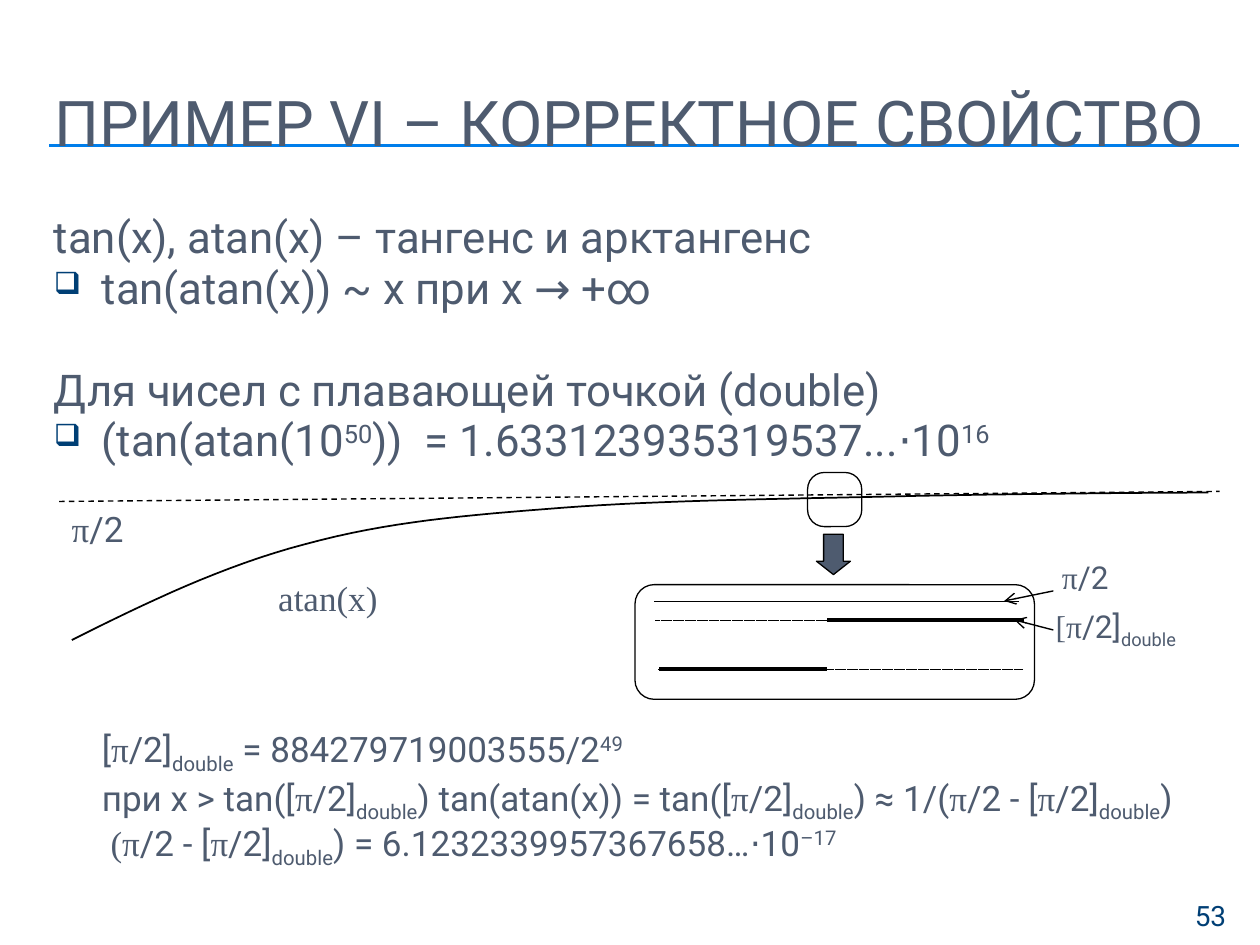
from lxml import etree
from pptx import Presentation
from pptx.dml.color import RGBColor
from pptx.enum.dml import MSO_LINE
from pptx.enum.shapes import MSO_CONNECTOR, MSO_SHAPE
from pptx.enum.text import MSO_ANCHOR, PP_ALIGN
from pptx.oxml.ns import qn
from pptx.util import Inches, Pt

SLATE = RGBColor(0x4E, 0x5B, 0x6F)
NAVY = RGBColor(0x00, 0x3F, 0x75)
BLUE = RGBColor(0x00, 0x7E, 0xEB)
BLACK = RGBColor(0, 0, 0)
WHITE = RGBColor(255, 255, 255)
SANS, SERIF = "Roboto", "Times New Roman"
DASH, DOTS, LONG = MSO_LINE.DASH, MSO_LINE.SQUARE_DOT, MSO_LINE.LONG_DASH
STRAIGHT = MSO_CONNECTOR.STRAIGHT
ROUND, DOWN = MSO_SHAPE.ROUNDED_RECTANGLE, MSO_SHAPE.DOWN_ARROW
LEFT, RIGHT = PP_ALIGN.LEFT, PP_ALIGN.RIGHT
MIDDLE, TOP = MSO_ANCHOR.MIDDLE, MSO_ANCHOR.TOP

# Content: a run is (text, style); styles: "" sans, "t" serif, "^" raised, "_" lowered
TITLE = "ПРИМЕР VI – КОРРЕКТНОЕ СВОЙСТВО"
PI = [("π", "t"), ("/2", "")]
PI_DBL = [("π", "t"), ("/2]", ""), ("double", "_")]

# Claims: (runs, bulleted, space before in points)
CLAIMS = [
    ([("tan(x), atan(x) – тангенс и арктангенс", "")], False, 0),
    ([("tan(atan(x)) ~ x при x → +∞", "")], True, 5),
    ([("Для чисел с плавающей точкой (double)", "")], False, 34),
    ([("(tan(atan(10", ""), ("50", "^"),
      ("))  = 1.633123935319537...⋅10", ""), ("16", "^")], True, 5),
]
PROOF = [
    ([("[", ""), *PI_DBL, (" = 884279719003555/2", ""), ("49", "^")], False, 0),
    ([("при x > tan([", ""), *PI_DBL, (") tan(atan(x)) = tan([", ""), *PI_DBL,
      (") ≈ 1/(", ""), ("π", "t"), ("/2 - [", ""), *PI_DBL, (")", "")], False, 6),
    ([(" (π", "t"), ("/2 - [", ""), *PI_DBL,
      (") = 6.1232339957367658…⋅10", ""), ("–17", "^")], False, 4),
]
# Labels: (runs, size, box)
LABELS = [
    (PI, 20, (0.47, 3.98, 0.78, 0.44)),
    ([("atan(x)", "t")], 20, (2.11, 4.53, 1.09, 0.44)),
    (PI, 18, (8.33, 4.38, 0.78, 0.4)),
    ([("[", "t"), *PI_DBL], 18, (8.28, 4.77, 1.56, 0.4)),
]
# Start of the arctangent curve, then cubic pieces
START = (0.57, 5.08)
CURVE = [
    ((1.17, 4.78), (1.77, 4.49), (2.42, 4.32)),
    ((3.08, 4.14), (3.69, 4.09), (4.47, 4.03)),
    ((5.25, 3.97), (6.26, 3.96), (7.11, 3.94)),
    ((7.97, 3.92), (9.19, 3.91), (9.59, 3.91)),
]
STEPS = 16
# Levels inside the zoom frame: limit, upper step, lower step
LIMIT, UPPER, LOWER, JUMP = 4.77, 4.92, 5.31, 6.56
HAIR = 0.05
# Lines: (x1, y1, x2, y2, width, dash, arrowhead)
LEVELS = [
    (8.08, LIMIT, 5.19, LIMIT, HAIR, DOTS, False),
    (JUMP, LOWER, 5.23, LOWER, 2, None, False),
    (8.13, UPPER, JUMP, UPPER, 2, None, False),
    (8.09, UPPER, 5.2, UPPER, HAIR, LONG, False),
    (8.12, LOWER, 5.22, LOWER, HAIR, LONG, False),
    (8.36, 4.69, 7.97, LIMIT, 0.79, None, True),
    (8.36, 5, 8.05, UPPER, 0.79, None, True),
]

deck = Presentation()
deck.slide_width, deck.slide_height = Inches(10), Inches(7.5)
slide = deck.slides.add_slide(deck.slide_layouts[5])
shapes = slide.shapes


def add_run(para, text, style, size, color):
    run = para.add_run()
    run.text = text
    font = run.font
    font.name = SERIF if style == "t" else SANS
    font.size, font.color.rgb = Pt(size), color
    if style in ("^", "_"):
        font._element.set("baseline", "30000" if style == "^" else "-25000")


def add_text(box, paras, size, color=SLATE, align=LEFT, tight=False):
    frame = shapes.add_textbox(*map(Inches, box)).text_frame
    frame.word_wrap = True
    frame.vertical_anchor = TOP
    for i, (runs, bullet, gap) in enumerate(paras):
        para = frame.add_paragraph() if i else frame.paragraphs[0]
        para.alignment, para.space_before = align, Pt(gap)
        if tight:
            para.line_spacing = 0.8
        if bullet:
            add_bullet(para)
        for text, style in runs:
            add_run(para, text, style, size, color)


def add_bullet(para):
    props = para._p.get_or_add_pPr()
    props.set("marL", str(Inches(0.38)))
    props.set("indent", str(-Inches(0.38)))
    tint = etree.SubElement(props, qn("a:buClr"))
    etree.SubElement(tint, qn("a:srgbClr"), val=str(NAVY))
    etree.SubElement(props, qn("a:buSzPct"), val="70000")
    etree.SubElement(props, qn("a:buChar"), char="❑")


def add_line(x1, y1, x2, y2, width, dash=None, head=False, color=BLACK):
    link = shapes.add_connector(STRAIGHT, *map(Inches, (x1, y1, x2, y2)))
    link.line.color.rgb, link.line.width = color, Pt(width)
    if dash:
        link.line.dash_style = dash
    props = link.element.spPr
    if head:
        etree.SubElement(props.find(qn("a:ln")), qn("a:tailEnd"), type="arrow")
    etree.SubElement(props, qn("a:effectLst"))


def add_form(kind, box, adjust, fill=None, alpha=None):
    form = shapes.add_shape(kind, *map(Inches, box))
    form.shadow.inherit = False
    for i, value in enumerate(adjust):
        form.adjustments[i] = value
    form.line.color.rgb, form.line.width = BLACK, Pt(0.75)
    if fill is None:
        form.fill.background()
        return
    form.fill.solid()
    form.fill.fore_color.rgb = fill
    if alpha:
        tint = form.element.spPr.find(qn("a:solidFill"))[0]
        etree.SubElement(tint, qn("a:alpha"), val=str(alpha * 1000))


def trace(start, pieces):
    for a, b, end in pieces:
        for i in range(1, STEPS + 1):
            t = i / STEPS
            u = 1 - t
            yield tuple(Inches(u**3 * p + 3 * u * u * t * q + 3 * u * t * t * r + t**3 * s)
                        for p, q, r, s in zip(start, a, b, end))
        start = end


# Rule behind the title
for y in (1.15, 1.16):
    add_line(0.39, y, 9.83, y, 0.75, color=BLUE)

# Title
title = shapes.title
title.left, title.top, title.width, title.height = map(Inches, (0.33, 0.5, 9.5, 0.92))
title.text_frame.word_wrap = True
title.text_frame.vertical_anchor = MIDDLE
head = title.text_frame.paragraphs[0]
head.alignment = LEFT
add_run(head, TITLE, "", 36, SLATE)
title.element.getparent().append(title.element)

# Body and page number
add_text((0.33, 1.7, 9.5, 2.1), CLAIMS, 25, tight=True)
add_text((0.71, 5.76, 9.2, 1.2), PROOF, 20, tight=True)
add_text((9, 7.08, 0.83, 0.27), [([("53", "")], False, 0)], 16, NAVY, RIGHT)

# Asymptote and curve
add_line(0.47, 3.98, 9.68, 3.9, 0.79, DASH)
pen = shapes.build_freeform(*map(Inches, START))
pen.add_line_segments(trace(START, CURVE), close=False)
curve = pen.convert_to_shape()
curve.shadow.inherit = False
curve.fill.background()
curve.line.color.rgb, curve.line.width = BLACK, Pt(1)

# Zoom frame, arrow and lens
add_form(ROUND, (5.04, 4.64, 3.17, 0.91), [0.167], WHITE, 60)
add_form(DOWN, (6.48, 4.24, 0.27, 0.32), [0.575, 0.393], SLATE)
add_form(ROUND, (6.41, 3.75, 0.43, 0.43), [0.309])
for level in LEVELS:
    add_line(*level)

# Labels
for runs, size, box in LABELS:
    add_text(box, [(runs, False, 0)], size)

deck.save("out.pptx")
